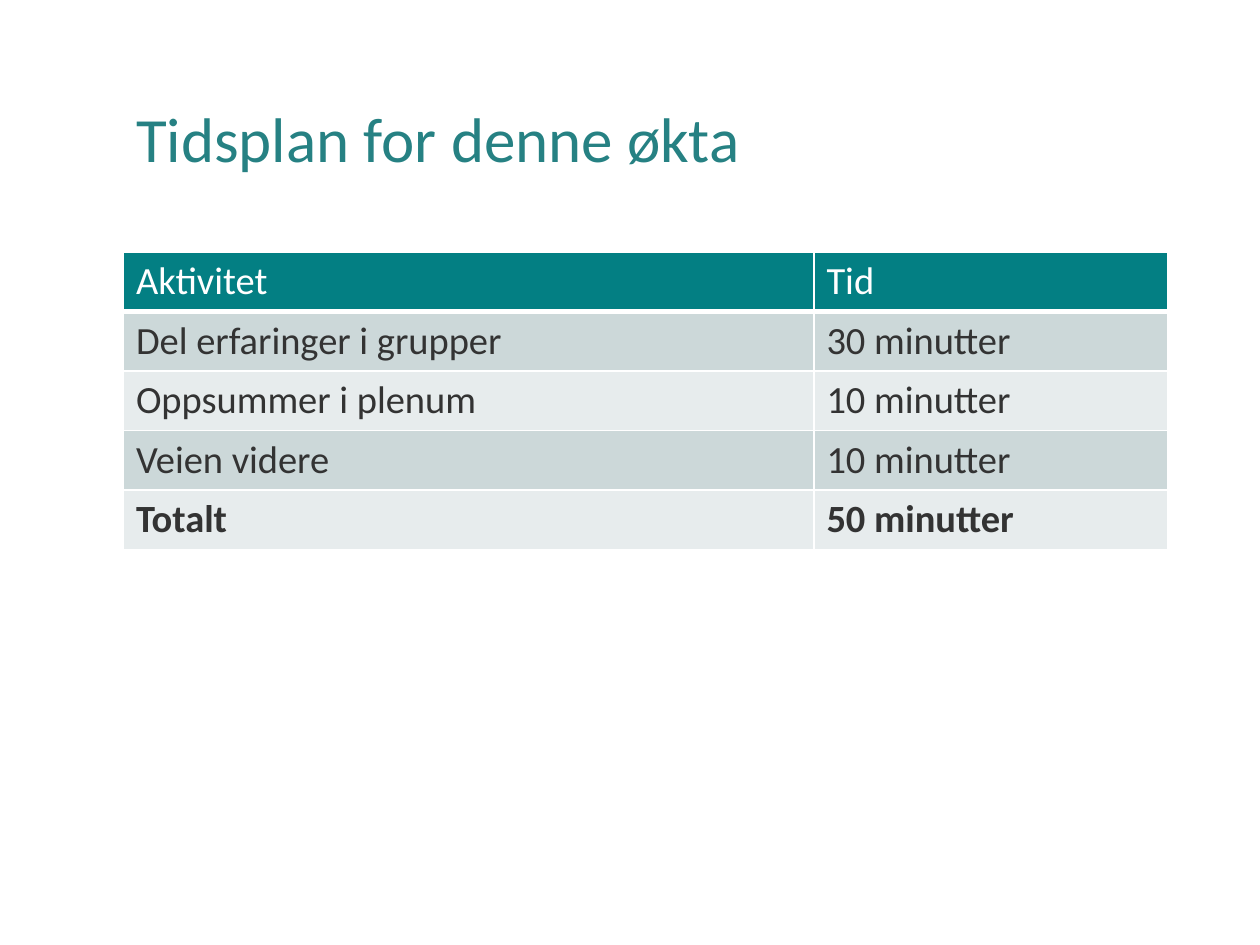
from dataclasses import dataclass

import pptx
import pptx.dml.color
import pptx.enum.text
import pptx.oxml
import pptx.oxml.ns
import pptx.util
from pptx.util import Inches


@dataclass(frozen=True)
class Theme:
    font: str = "Calibri"
    title_size: int = 36
    table_size: int = 22
    title: str = "268183"
    header: str = "037F83"
    bands: tuple = ("CCD8D9", "E7ECED")
    text: str = "333333"
    white: str = "FFFFFF"


THEME = Theme()
LEFT, WIDTH = 0.98, 8.29
COLUMN_WIDTHS = (5.48, 2.81)
ROW_HEIGHT = 0.466
SCHEDULE = (
    ("Aktivitet", "Tid"),
    ("Del erfaringer i grupper", "30 minutter"),
    ("Oppsummer i plenum", "10 minutter"),
    ("Veien videre", "10 minutter"),
    ("Totalt", "50 minutter"),
)


def rgb(value):
    return pptx.dml.color.RGBColor.from_string(value)


def format_text(frame, size, color, bold=False):
    for para in frame.paragraphs:
        for span in para.runs:
            span.font.name = THEME.font
            span.font.size = pptx.util.Pt(size)
            span.font.color.rgb = rgb(color)
            span.font.bold = bold


def add_title(page, text):
    title = page.shapes.title
    title.left, title.top = Inches(LEFT), Inches(0.4)
    title.width, title.height = Inches(WIDTH), Inches(1.45)
    frame = title.text_frame
    frame.text = text
    frame.vertical_anchor = pptx.enum.text.MSO_ANCHOR.MIDDLE
    frame.paragraphs[0].alignment = pptx.enum.text.PP_ALIGN.LEFT
    frame.paragraphs[0].line_spacing = 0.9
    format_text(frame, THEME.title_size, THEME.title)


def set_borders(cell, widths):
    """Draw white borders; widths maps each side (L, R, T, B) to points."""
    properties = cell._tc.get_or_add_tcPr()
    for side, width in widths.items():
        properties.append(pptx.oxml.parse_xml(
            f'<a:ln{side} {pptx.oxml.ns.nsdecls("a")} w="{pptx.util.Pt(width)}">'
            f'<a:solidFill><a:srgbClr val="{THEME.white}"/></a:solidFill>'
            f'</a:ln{side}>'))


def add_schedule(page, rows):
    """Add a table with a header row, banded rows and a bold total."""
    table = page.shapes.add_table(
        len(rows), len(COLUMN_WIDTHS), Inches(LEFT), Inches(2),
        Inches(WIDTH), Inches(ROW_HEIGHT * len(rows))).table
    for column, width in zip(table.columns, COLUMN_WIDTHS):
        column.width = Inches(width)
    for row_index, row in enumerate(rows):
        header = row_index == 0
        total = row_index == len(rows) - 1
        fill = THEME.header if header else THEME.bands[(row_index - 1) % 2]
        borders = {"L": 1, "R": 1,
                   "T": 3 if row_index == 1 else 1,
                   "B": 3 if header else 1}
        for column_index, text in enumerate(row):
            cell = table.cell(row_index, column_index)
            cell.text = text
            set_borders(cell, borders)
            cell.fill.solid()
            cell.fill.fore_color.rgb = rgb(fill)
            format_text(cell.text_frame, THEME.table_size,
                        THEME.white if header else THEME.text, bold=total)


def main():
    deck = pptx.Presentation()
    deck.slide_width, deck.slide_height = Inches(10), Inches(7.5)
    page = deck.slides.add_slide(deck.slide_layouts.get_by_name("Title Only"))
    add_title(page, "Tidsplan for denne økta")
    add_schedule(page, SCHEDULE)
    deck.save("out.pptx")


if __name__ == "__main__":
    main()
